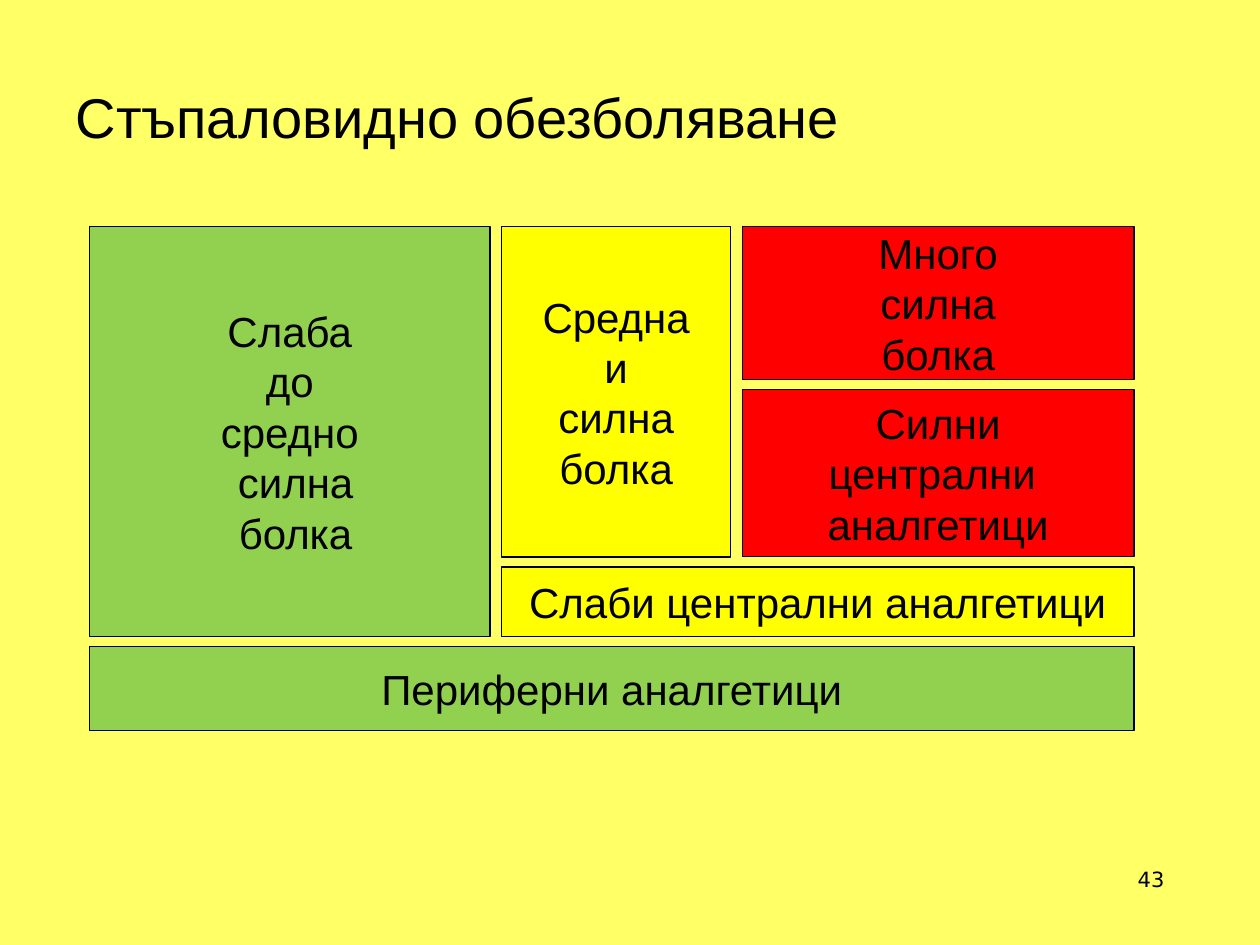
"""Build a slide showing stepwise pain relief as a stack of blocks."""
from dataclasses import dataclass

from pptx import Presentation
from pptx.dml.color import RGBColor
from pptx.enum.shapes import MSO_SHAPE
from pptx.enum.text import MSO_ANCHOR, PP_ALIGN
from pptx.util import Inches, Pt


@dataclass(frozen=True)
class Theme:
    """Colours, fonts and type sizes."""
    back: str = "FFFF66"
    ink: str = "000000"
    mild: str = "92D050"
    mid: str = "FFFF00"
    strong: str = "FF0000"
    font: str = "Arial"
    num_font: str = "DejaVu Sans"
    head: int = 32
    body: int = 24
    note: int = 12
    rule: float = 0.75


THEME = Theme()
TITLE = "Стъпаловидно обезболяване"
NUMBER = "43"
LEFT, TOP = 0.71, 1.8
COLS, COL_GAP = (3.18, 1.82, 3.11), 0.09
ROWS, ROW_GAP = (1.21, 1.33, 0.55, 0.67), 0.08

# column, row, column span, row span, fill, lines
BLOCKS = [
    (0, 0, 1, 3, THEME.mild, ["Слаба", "до", "средно", " силна", " болка"]),
    (0, 3, 3, 1, THEME.mild, ["Периферни аналгетици"]),
    (1, 0, 1, 2, THEME.mid, ["Средна", "и", "силна", "болка"]),
    (1, 2, 2, 1, THEME.mid, ["Слаби централни аналгетици"]),
    (2, 0, 1, 1, THEME.strong, ["Много", "силна", "болка"]),
    (2, 1, 1, 1, THEME.strong, ["Силни", "централни ", "аналгетици"]),
]


def rgb(code):
    """Turn a hex code into a colour."""
    return RGBColor.from_string(code)


def extent(start, sizes, gap, first, span):
    """Return the start and length of a run of grid tracks."""
    begin = start + sum(sizes[:first]) + gap * first
    length = sum(sizes[first:first + span]) + gap * (span - 1)
    return Inches(begin), Inches(length)


def write(frame, lines, size, align, font=THEME.font):
    """Write one styled paragraph per line."""
    frame.text = "\n".join(lines)
    for para in frame.paragraphs:
        para.alignment = align
        para.font.name = font
        para.font.size = Pt(size)
        para.font.color.rgb = rgb(THEME.ink)


def add_block(slide, col, row, wide, high, fill, lines):
    """Draw one block of the grid."""
    left, width = extent(LEFT, COLS, COL_GAP, col, wide)
    top, height = extent(TOP, ROWS, ROW_GAP, row, high)
    block = slide.shapes.add_shape(MSO_SHAPE.RECTANGLE, left, top, width, height)
    block.shadow.inherit = False
    block.fill.solid()
    block.fill.fore_color.rgb = rgb(fill)
    block.line.color.rgb = rgb(THEME.ink)
    block.line.width = Pt(THEME.rule)
    frame = block.text_frame
    frame.word_wrap = False
    frame.vertical_anchor = MSO_ANCHOR.MIDDLE
    write(frame, lines, THEME.body, PP_ALIGN.CENTER)


def main():
    """Assemble and save the slide."""
    deck = Presentation()
    deck.slide_width, deck.slide_height = Inches(10), Inches(7.5)
    slide = deck.slides.add_slide(deck.slide_layouts[5])
    slide.background.fill.solid()
    slide.background.fill.fore_color.rgb = rgb(THEME.back)

    title = slide.shapes.title
    title.left, title.top = Inches(0.5), Inches(0.3)
    title.width, title.height = Inches(9), Inches(1.25)
    title.text_frame.vertical_anchor = MSO_ANCHOR.MIDDLE
    write(title.text_frame, [TITLE], THEME.head, PP_ALIGN.LEFT)

    for block in BLOCKS:
        add_block(slide, *block)

    number = slide.shapes.add_textbox(
        Inches(7.17), Inches(6.83), Inches(2.17), Inches(0.52))
    number.text_frame.word_wrap = True
    write(number.text_frame, [NUMBER], THEME.note, PP_ALIGN.RIGHT, THEME.num_font)
    deck.save("out.pptx")


if __name__ == "__main__":
    main()
